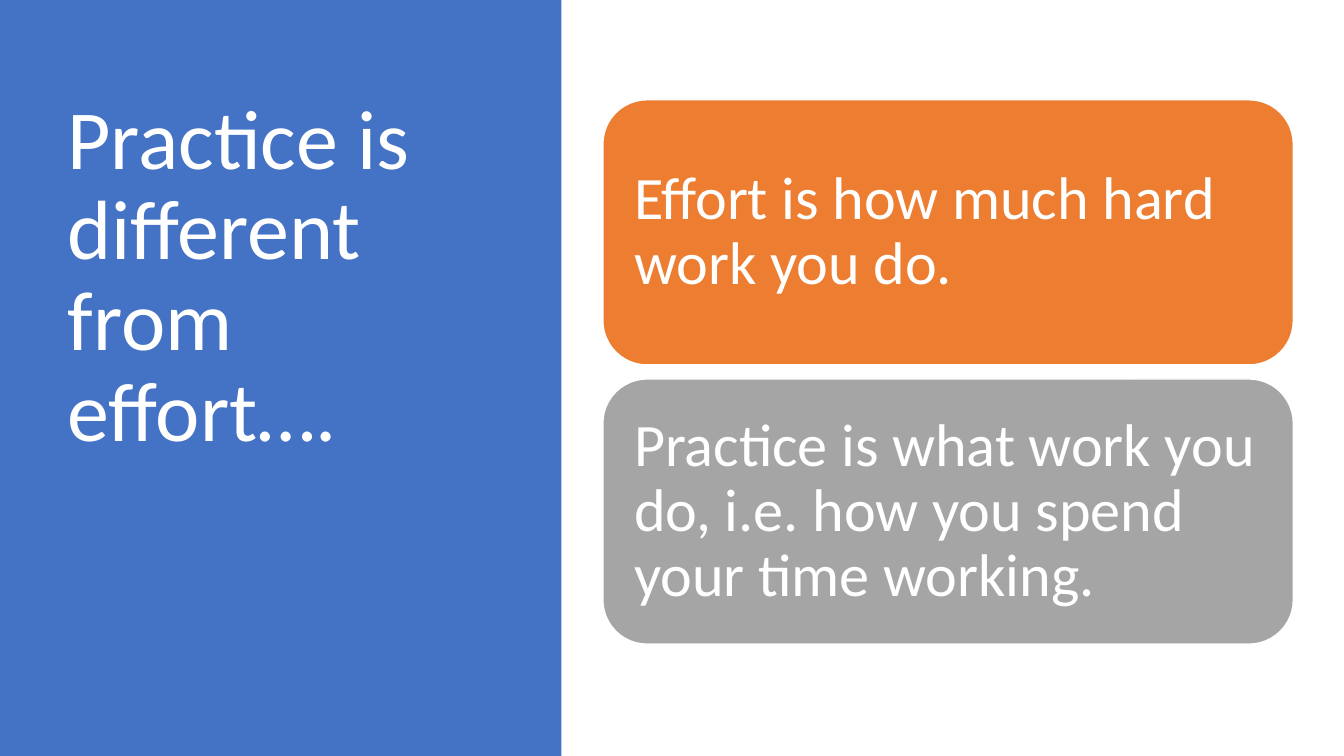
from pptx import Presentation
from pptx.dml.color import RGBColor
from pptx.enum import shapes, text
from pptx.util import Pt

WHITE = RGBColor(0xFF, 0xFF, 0xFF)
BLUE = RGBColor(0x44, 0x72, 0xC4)
ORANGE = RGBColor(0xED, 0x7D, 0x31)
GRAY = RGBColor(0xA5, 0xA5, 0xA5)
FONT = "Calibri"

TITLE = "Practice is different from effort…."
CARDS = [
    ("Effort is how much hard work you do.", ORANGE),
    ("Practice is what work you do, i.e. how you spend your time working.", GRAY),
]

SLIDE_WIDTH, SLIDE_HEIGHT = 960, 540
PANEL_WIDTH = 401
CARD_LEFT, CARD_TOP, CARD_WIDTH, CARD_HEIGHT = 430.6, 71.3, 493.2, 189.4
CARD_GAP = 10


def write_text(shape, words, *, size, anchor, margins):
    """Fill a shape with one white paragraph; margins are left, top, right, bottom."""
    frame = shape.text_frame
    frame.text = words
    frame.word_wrap = True
    frame.auto_size = text.MSO_AUTO_SIZE.NONE
    frame.vertical_anchor = anchor
    (frame.margin_left, frame.margin_top,
     frame.margin_right, frame.margin_bottom) = map(Pt, margins)
    paragraph = frame.paragraphs[0]
    paragraph.alignment = text.PP_ALIGN.LEFT
    paragraph.line_spacing = 0.9
    font = paragraph.runs[0].font
    font.name, font.size = FONT, Pt(size)
    font.color.rgb = WHITE


def add_block(slide, kind, left, top, width, height, fill):
    shape = slide.shapes.add_shape(kind, Pt(left), Pt(top), Pt(width), Pt(height))
    shape.shadow.inherit = False
    shape.fill.solid()
    shape.fill.fore_color.rgb = fill
    shape.line.fill.background()
    return shape


def main():
    presentation = Presentation()
    presentation.slide_width = Pt(SLIDE_WIDTH)
    presentation.slide_height = Pt(SLIDE_HEIGHT)
    slide = presentation.slides.add_slide(presentation.slide_layouts[5])

    title = slide.shapes.title
    title.left, title.top, title.width, title.height = map(Pt, (41, 49, 299.5, 433.4))
    write_text(title, TITLE, size=60, anchor=text.MSO_ANCHOR.TOP,
               margins=(7.2, 20, 7.2, 3.6))

    panel = add_block(slide, shapes.MSO_SHAPE.RECTANGLE,
                      0, 0, PANEL_WIDTH, SLIDE_HEIGHT, BLUE)
    title._element.addprevious(panel._element)  # the panel lies behind the title

    for index, (words, fill) in enumerate(CARDS):
        top = CARD_TOP + index * (CARD_HEIGHT + CARD_GAP)
        card = add_block(slide, shapes.MSO_SHAPE.ROUNDED_RECTANGLE,
                         CARD_LEFT, top, CARD_WIDTH, CARD_HEIGHT, fill)
        card.line.color.rgb = WHITE
        card.line.width = Pt(1)
        write_text(card, words, size=43, anchor=text.MSO_ANCHOR.MIDDLE,
                   margins=(13, 13, 13, 13))

    presentation.save("out.pptx")


if __name__ == "__main__":
    main()
